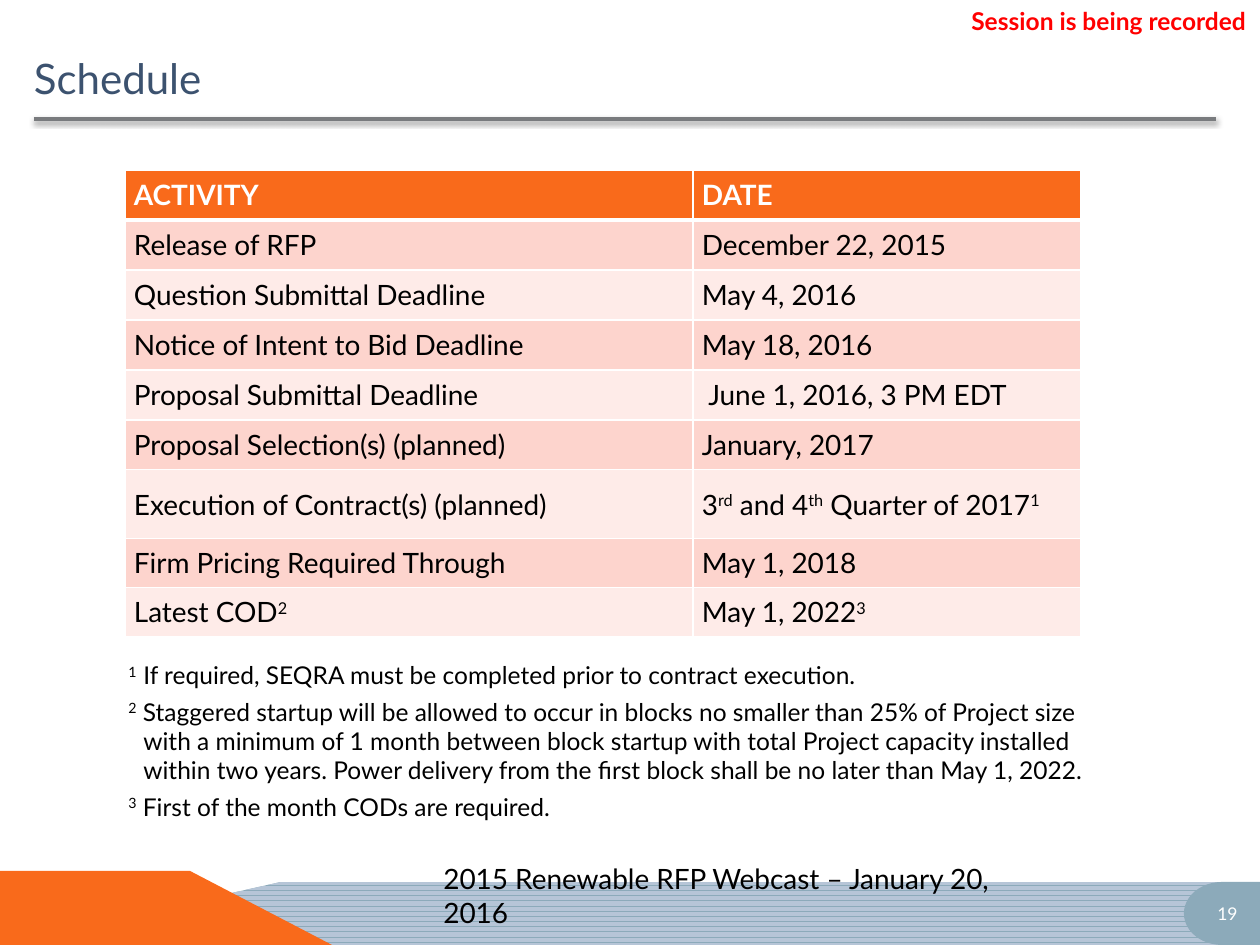
import lxml.etree
import pptx
import pptx.dml.color
import pptx.enum.dml
import pptx.enum.shapes
import pptx.enum.text
import pptx.oxml
import pptx.oxml.ns
import pptx.util

RGBColor = pptx.dml.color.RGBColor
Pt = pptx.util.Pt
Align = pptx.enum.text.PP_ALIGN
Anchor = pptx.enum.text.MSO_ANCHOR
qn = pptx.oxml.ns.qn

# 126 px to the inch
SCALE = 914400 / 126

WHITE = RGBColor(0xFF, 0xFF, 0xFF)
BLACK = RGBColor(0x00, 0x00, 0x00)
RED = RGBColor(0xFF, 0x00, 0x00)
NAVY = RGBColor(0x3C, 0x52, 0x6F)
GRAY = RGBColor(0x79, 0x7B, 0x7E)
ORANGE = RGBColor(0xF9, 0x6A, 0x1B)
STEEL = RGBColor(0x8C, 0xAA, 0xBA)
PALE_BLUE = RGBColor(0xB6, 0xC5, 0xD7)
PINK = RGBColor(0xFD, 0xD4, 0xCD)
PALE_PINK = RGBColor(0xFE, 0xEB, 0xE8)

# Text between ^ marks is superscript
SCHEDULE = [
    ("ACTIVITY", "DATE"),
    ("Release of RFP", "December 22, 2015"),
    ("Question Submittal Deadline", "May 4, 2016"),
    ("Notice of Intent to Bid Deadline", "May 18, 2016"),
    ("Proposal Submittal Deadline", " June 1, 2016, 3 PM EDT"),
    ("Proposal Selection(s) (planned)", "January, 2017"),
    ("Execution of Contract(s) (planned)", "3^rd^ and 4^th^ Quarter of 2017^1^"),
    ("Firm Pricing Required Through", "May 1, 2018"),
    ("Latest COD^2^", "May 1, 2022^3^"),
]
COLUMN_WIDTHS = [568, 388]
ROW_HEIGHTS = [50] * 6 + [69] + [49] * 2

NOTES = [
    "^1\t^If required, SEQRA must be completed prior to contract execution.",
    "^2^ Staggered startup will be allowed to occur in blocks no smaller than "
    "25% of Project size with a minimum of 1 month between block startup with "
    "total Project capacity installed within two years. Power delivery from "
    "the first block shall be no later than May 1, 2022.",
    "^3^ First of the month CODs are required.",
]

SHADOW = (
    '<a:effectLst xmlns:a="http://schemas.openxmlformats.org/drawingml/2006/main">'
    '<a:outerShdw blurRad="39370" dist="20320" dir="5400000" rotWithShape="0">'
    '<a:srgbClr val="000000"><a:alpha val="38000"/></a:srgbClr>'
    "</a:outerShdw></a:effectLst>"
)


def px(length):
    return pptx.util.Emu(round(length * SCALE))


def set_values(target, values):
    for name, value in values.items():
        setattr(target, name, value)


def write(frame, lines, color, font, layout=None, hanging=0):
    """Fill a text frame, one paragraph to a line."""
    for index, line in enumerate(lines):
        para = frame.paragraphs[0] if index == 0 else frame.add_paragraph()
        set_values(para, layout or {})
        if hanging:
            properties = para._p.get_or_add_pPr()
            properties.set("marL", str(px(hanging)))
            properties.set("indent", str(-px(hanging)))
        for part, text in enumerate(line.split("^")):
            if not text:
                continue
            span = para.add_run()
            span.text = text
            set_values(span.font, {"name": "Lato", **font})
            span.font.color.rgb = color
            if part % 2:
                span._r.get_or_add_rPr().set("baseline", "30000")


def add_text(page, place, lines, color, font, anchor=Anchor.TOP, **style):
    box = page.shapes.add_textbox(*map(px, place))
    set_values(box.text_frame, {"word_wrap": True, "vertical_anchor": anchor})
    write(box.text_frame, lines, color, font, **style)


def add_outline(page, points):
    builder = page.shapes.build_freeform(*points[0], scale=SCALE)
    builder.add_line_segments(points[1:], close=True)
    shape = builder.convert_to_shape()
    shape.shadow.inherit = False
    shape.line.fill.background()
    return shape


def add_page_number(page, place, number):
    badge = page.shapes.add_shape(
        pptx.enum.shapes.MSO_SHAPE.FLOWCHART_DELAY, *map(px, place))
    badge.shadow.inherit = False
    badge.fill.solid()
    badge.fill.fore_color.rgb = STEEL
    badge.line.fill.background()
    badge._element.spPr.find(qn("a:xfrm")).set("flipH", "1")
    badge.text_frame.vertical_anchor = Anchor.MIDDLE
    write(badge.text_frame, [number], WHITE, {"size": Pt(10)},
          {"alignment": Align.CENTER})


def add_footer(page):
    band = add_outline(page, [(0, 945), (281, 882), (1260, 882), (1260, 945)])
    band.fill.patterned()
    band.fill.pattern = pptx.enum.dml.MSO_PATTERN.DARK_HORIZONTAL
    band.fill.fore_color.rgb = PALE_BLUE
    band.fill.back_color.rgb = STEEL
    wedge = add_outline(page, [(0, 945), (0, 871), (190, 871), (332, 945)])
    wedge.fill.solid()
    wedge.fill.fore_color.rgb = ORANGE
    add_page_number(page, (1184, 882, 76, 63), "19")
    add_text(page, (431, 869, 630, 66),
             ["2015 Renewable RFP Webcast – January 20, 2016"], BLACK,
             {"size": Pt(16)}, Anchor.BOTTOM)


def add_heading(page, text):
    title = page.shapes.title
    set_values(title, dict(zip(("left", "top", "width", "height"),
                               map(px, (34, 53, 1182, 84)))))
    set_values(title.text_frame, {
        "margin_left": 0, "margin_top": 0, "margin_right": 0,
        "margin_bottom": 0, "vertical_anchor": Anchor.TOP,
        "auto_size": pptx.enum.text.MSO_AUTO_SIZE.NONE})
    write(title.text_frame, [text], NAVY, {"size": Pt(24)},
          {"alignment": Align.LEFT})
    rule = page.shapes.add_connector(
        pptx.enum.shapes.MSO_CONNECTOR.STRAIGHT, *map(px, (34, 119, 1216, 119)))
    rule.line.color.rgb = GRAY
    rule.line.width = Pt(2)
    rule._element.spPr.append(pptx.oxml.parse_xml(SHADOW))


def add_borders(cell, widths):
    """Draw white edges; widths run left, right, top, bottom."""
    properties = cell._tc.get_or_add_tcPr()
    for index, (side, width) in enumerate(zip("LRTB", widths)):
        edge = lxml.etree.Element(qn("a:ln" + side), w=str(Pt(width)))
        fill = lxml.etree.SubElement(edge, qn("a:solidFill"))
        lxml.etree.SubElement(fill, qn("a:srgbClr"), val=str(WHITE))
        properties.insert(index, edge)


def add_schedule(page, left, top):
    table = page.shapes.add_table(
        len(SCHEDULE), len(COLUMN_WIDTHS), px(left), px(top),
        px(sum(COLUMN_WIDTHS)), px(sum(ROW_HEIGHTS))).table
    for column, width in zip(table.columns, COLUMN_WIDTHS):
        column.width = px(width)
    for index, (row, height, texts) in enumerate(
            zip(table.rows, ROW_HEIGHTS, SCHEDULE)):
        row.height = px(height)
        header = index == 0
        fill = ORANGE if header else PINK if index % 2 else PALE_PINK
        for cell, text in zip(row.cells, texts):
            set_values(cell, {
                "margin_left": px(9), "margin_right": px(9), "margin_top": 0,
                "margin_bottom": 0, "vertical_anchor": Anchor.MIDDLE})
            cell.fill.solid()
            cell.fill.fore_color.rgb = fill
            add_borders(cell, (1, 1, 3 if index == 1 else 1, 3 if header else 1))
            write(cell.text_frame, [text], WHITE if header else BLACK,
                  {"size": Pt(16), "bold": header}, {"space_after": Pt(2)})


def main():
    deck = pptx.Presentation()
    deck.slide_width, deck.slide_height = px(1260), px(945)
    page = deck.slides.add_slide(deck.slide_layouts[5])

    # Footer band, title and recording notice
    add_footer(page)
    add_heading(page, "Schedule")
    add_text(page, (959, 0, 305, 43), ["Session is being recorded"], RED,
             {"size": Pt(14), "bold": True})

    # Schedule and its footnotes
    add_schedule(page, 125, 170)
    add_text(page, (116, 654, 998, 212), NOTES, BLACK, {"size": Pt(14)},
             layout={"space_after": Pt(4)}, hanging=15)

    deck.save("out.pptx")


if __name__ == "__main__":
    main()
